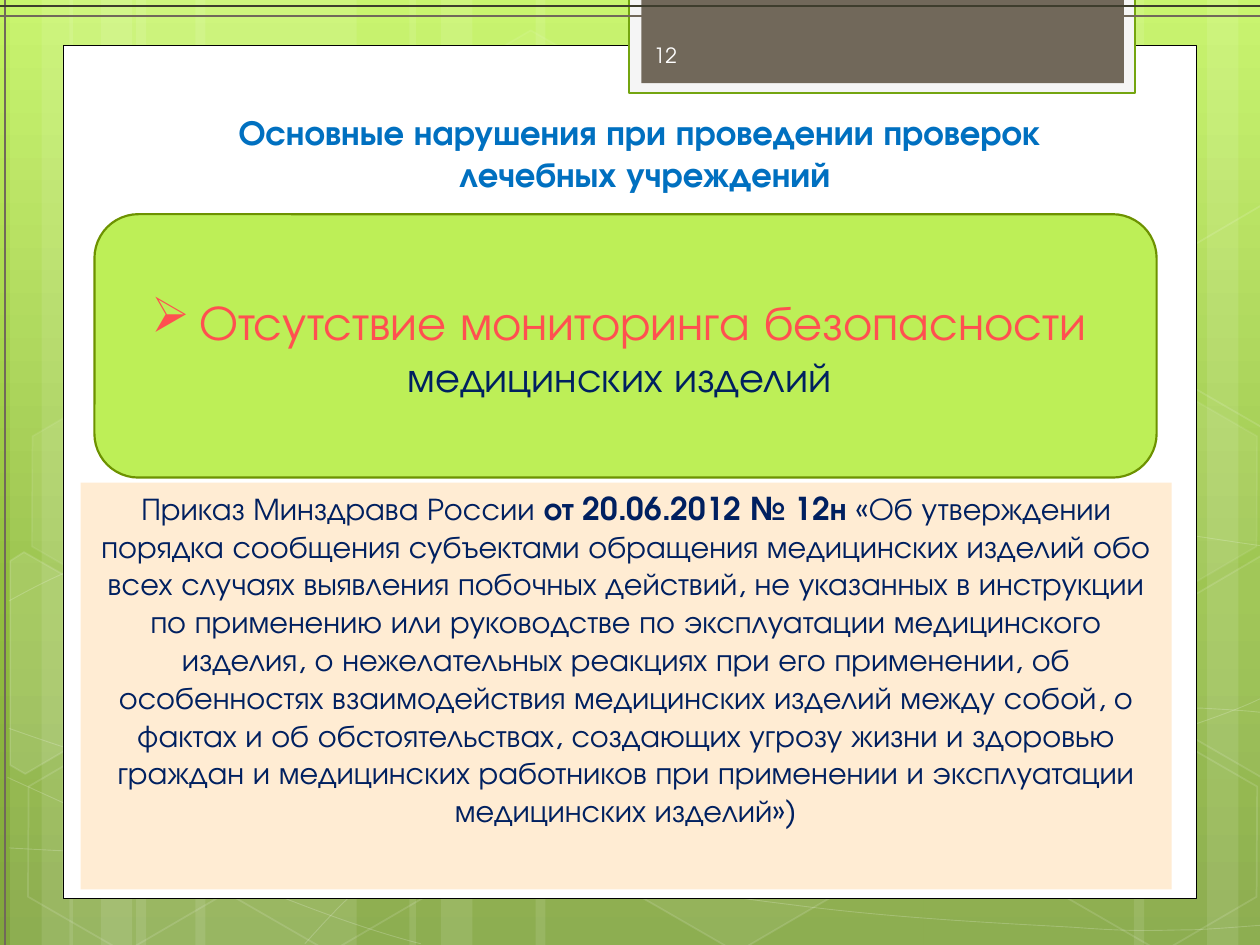
from copy import deepcopy
from math import cos, radians, sin
from lxml.etree import SubElement
from pptx import Presentation
from pptx.dml.color import RGBColor
from pptx.enum.shapes import MSO_CONNECTOR, MSO_SHAPE
from pptx.enum.text import MSO_ANCHOR, MSO_AUTO_SIZE, PP_ALIGN
from pptx.oxml.ns import qn
from pptx.util import Inches, Pt

COLS, ROWS = 10, 7.5
WIDE, HIGH = Inches(10), Inches(7.5)
CELL = WIDE / COLS
FONT = "TeX Gyre Adventor"
HUES = dict(white="FFFFFF", black="000000", paper="F5F5F5", edge="74A510", brown="71685A",
            dark="3E3D2D", lime="BDEF57", olive="6D9200", cream="FFECD3", blue="0070C0",
            navy="002060", red="FF5050")
FADE = [(0, "C3F35F"), (0.62, "93BF3F"), (1, "81A53E")]

HEAD = [[("Основные нарушения при проведении проверок", 20, "blue", True)],
        [(" лечебных учреждений", 20, "blue", True)]]
CARD = [[("Отсутствие мониторинга безопасности ", 28, "red", False)],
        [("медицинских изделий ", 24, "navy", False)]]
ORDER = [[("Приказ Минздрава России ", 18, "navy", False),
          ("от 20.06.2012 № 12н ", 18, "navy", True),
          ("«Об утверждении порядка сообщения субъектами обращения медицинских изделий обо всех "
           "случаях выявления побочных действий, не указанных в инструкции по применению или "
           "руководстве по эксплуатации медицинского изделия, о нежелательных реакциях при его "
           "применении, об особенностях взаимодействия медицинских изделий между собой, о фактах "
           "и об обстоятельствах, создающих угрозу жизни и здоровью граждан и медицинских "
           "работников при применении и эксплуатации медицинских изделий»)", 18, "navy", False)]]
PAGE = [[("12", 12, "white", False)]]

BANDS = [(1.08, 1.75), (0.08, 0.5), (0.33, 0.83), (1.55, 1.75), (0.55, 0.5), (0.8, 0.83),
         (7.33, 1.75), (9.58, 0.5), (9, 0.83), (4.25, 3.08), (3.25, 0.5), (3.5, 0.83)]
WAVES = [
    [(0.07, 6.73), (0.61, 6.76), (1.15, 6.79), (1.9, 6.78), (2.65, 6.77), (3.58, 6.75),
     (4.58, 6.65), (5.58, 6.55), (7, 6.36), (7.92, 6.17), (8.83, 5.98), (9.77, 5.68),
     (10.07, 5.51)],
    [(0.07, 4.77), (0.36, 4.61), (0.65, 4.46), (1.21, 4.31), (1.78, 4.16), (2.59, 3.94),
     (3.47, 3.87), (4.36, 3.8), (5.44, 3.79), (6.54, 3.87), (7.64, 3.95), (9.47, 4.26),
     (10.07, 4.34)],
    [(0.06, 6.17), (1.27, 6.72), (2.47, 7.27), (3.34, 7.49)],
    [(0.07, 5.78), (0.38, 5.89), (0.7, 6), (1.28, 6.16), (1.86, 6.31), (2.73, 6.56),
     (3.57, 6.73), (4.4, 6.9), (5.45, 7.08), (6.28, 7.18), (7.11, 7.29), (8, 7.33),
     (8.53, 7.36), (9.05, 7.4), (9.19, 7.38), (9.45, 7.38), (9.71, 7.37), (9.89, 7.35),
     (10.07, 7.34)],
    [(2.42, 7.49), (2.6, 7.29), (2.78, 7.09), (3.02, 6.91), (3.26, 6.73), (3.6, 6.53),
     (3.88, 6.39), (4.16, 6.25), (4.33, 6.19), (4.7, 6.09), (5.06, 5.99), (5.73, 5.85),
     (6.08, 5.78), (6.44, 5.71), (6.49, 5.71), (6.8, 5.69), (7.11, 5.66), (7.6, 5.63),
     (7.94, 5.62), (8.29, 5.61), (8.86, 5.62), (8.86, 5.62), (8.86, 5.62), (9.53, 5.62),
     (9.53, 5.62), (9.71, 5.63), (9.88, 5.64), (9.97, 5.65), (10.06, 5.66), (10.03, 5.65),
     (10.06, 5.66)],
]
HEXES = [(3.34, 0, 4, 8), (4.97, 4, 6, 12), (0.11, 4, 0, 12), (0.14, 2, 7, 8), (1.74, 4, 0, 12),
         (7.53, 3, 10, 12), (8.34, 4, 0, 12), (8.34, 2, 7, 8)]
PITCH, TILT = 1.39, 30
LEFT = [(0.08, 4.45), (0.19, 4.38), (0.96, 4.82), (0.95, 5.7), (0.2, 6.14), (0.08, 6.07)]
RIGHT = [(9.26, 4.85), (10.01, 4.41), (10.09, 4.46), (10.09, 6.13), (10.02, 6.17), (9.26, 5.73)]
CUTS = [(LEFT, (0.36, 5.35), 0, 10), (RIGHT, (9.85, 5.2), 0, 4), (RIGHT, (9.85, 5.2), 2, 0)]
RULES = [((COLS, 0.13), (0, 0.13), "brown"), ((0.04, 0), (0.04, ROWS), "brown"),
         ((0, 0.05), (COLS, 0.05), "dark")]


def grid(*cells):
    return [round(c * CELL) for c in cells]


def tint(fill, hue, alpha=100):
    if not alpha:
        fill.background()
        return
    fill.solid()
    fill.fore_color.rgb = RGBColor.from_string(HUES[hue])
    if alpha < 100:
        node = fill._xPr.find(qn("a:solidFill"))[0]
        SubElement(node, qn("a:alpha"), val=str(alpha * 1000))


def paint(shape, hue, alpha=100, line=None, width=1, haze=100):
    shape.shadow.inherit = False
    tint(shape.fill, hue, alpha)
    tint(shape.line.fill, line, haze if line else 0)
    if line:
        shape.line.width = Pt(width)
    return shape


def block(kind, at, *look):
    return paint(slide.shapes.add_shape(kind, *grid(*at)), *look)


def trace(dots, close, *look):
    dots = [grid(*d) for d in dots]
    pen = slide.shapes.build_freeform(*dots[0])
    pen.add_line_segments(dots[1:], close=close)
    return paint(pen.convert_to_shape(), *look)


def bend(shape):
    legs = list(shape._element.iter(qn("a:lnTo")))
    for i in range(0, len(legs), 3):
        curve = SubElement(legs[i].getparent(), qn("a:cubicBezTo"))
        for leg in legs[i:i + 3]:
            curve.append(leg[0])
            leg.getparent().remove(leg)


def turn(dots, hub, angle):
    c, s = cos(radians(angle)), sin(radians(angle))
    moves = [(x - hub[0], y - hub[1]) for x, y in dots]
    return [(hub[0] + x * c - y * s, hub[1] + x * s + y * c) for x, y in moves]


def write(shape, paras, anchor=MSO_ANCHOR.TOP, align=PP_ALIGN.CENTER, mark=None):
    frame = shape.text_frame
    look = dict(word_wrap=True, auto_size=MSO_AUTO_SIZE.NONE, vertical_anchor=anchor)
    for key, val in look.items():
        setattr(frame, key, val)
    for i, runs in enumerate(paras):
        para = frame.add_paragraph() if i else frame.paragraphs[0]
        para.alignment = align
        if mark and not i:
            props = para._p.get_or_add_pPr()
            pad = grid(0.38)[0]
            props.set("marL", str(pad))
            props.set("indent", str(-pad))
            SubElement(SubElement(props, qn("a:buClr")), qn("a:srgbClr"), val=HUES["red"])
            SubElement(props, qn("a:buFont"), typeface="Wingdings", charset="2")
            SubElement(props, qn("a:buChar"), char=mark)
        for text, size, hue, bold in runs:
            run = para.add_run()
            run.text = text
            for key, val in dict(name=FONT, size=Pt(size), bold=bold).items():
                setattr(run.font, key, val)
            run.font.color.rgb = RGBColor.from_string(HUES[hue])


deck = Presentation()
deck.slide_width, deck.slide_height = WIDE, HIGH
slide = deck.slides.add_slide(deck.slide_layouts[5])

back = slide.background.fill
back.gradient()
back.gradient_angle = 270
first = next(slide._element.iter(qn("a:gs")))
first.addnext(deepcopy(first))
for stop, (pos, hue) in zip(back.gradient_stops, FADE):
    stop.position = pos
    stop.color.rgb = RGBColor.from_string(hue)

for x, w in BANDS:
    block(MSO_SHAPE.RECTANGLE, (x, 0, w, ROWS), "white", 10)
for knots in WAVES:
    bend(trace(knots, False, "white", 0, "white", 0.5, 20))
for x, row, alpha, haze in HEXES:
    cell = block(MSO_SHAPE.HEXAGON, (x, 0.36 + row * PITCH, 1.75, 1.52),
                 "white", alpha, "white", 1, haze)
    cell.adjustments[0] = 0.285
    cell.rotation = TILT
for dots, hub, rise, alpha in CUTS:
    flat = [(x, y - rise * PITCH) for x, y in turn(dots, hub, -TILT)]
    trace(flat, True, "white", alpha, "white", 1, 12).rotation = TILT

block(MSO_SHAPE.RECTANGLE, (0.5, 0.36, 9, 6.77), "white", 100, "black", 0.5)
block(MSO_SHAPE.RECTANGLE, (4.99, -0.02, 4.02, 0.76), "paper", 100, "edge", 1.25)
block(MSO_SHAPE.RECTANGLE, (5.09, -0.02, 3.83, 0.68), "brown")
for start, end, hue in RULES:
    rule = slide.shapes.add_connector(MSO_CONNECTOR.STRAIGHT, *grid(*start, *end))
    tint(rule.line.fill, hue)
    rule.line.width = Pt(1.25)
    SubElement(rule._element.spPr, qn("a:effectLst"))

title = slide.shapes.title
for key, val in zip(("left", "top", "width", "height"), grid(0.75, 0.83, 8.66, 0.77)):
    setattr(title, key, val)
write(title, HEAD)
slide.shapes._spTree.append(title._element)

card = block(MSO_SHAPE.ROUNDED_RECTANGLE, (0.75, 1.7, 8.43, 2.09), "lime", 100, "olive", 1.25)
write(card, CARD, MSO_ANCHOR.MIDDLE, mark="Ø")
write(block(MSO_SHAPE.RECTANGLE, (0.64, 3.83, 8.66, 3.23), "cream"), ORDER)
write(slide.shapes.add_textbox(*grid(5.09, 0.24, 1.46, 0.4)), PAGE,
      MSO_ANCHOR.MIDDLE, PP_ALIGN.LEFT)

deck.save("out.pptx")
